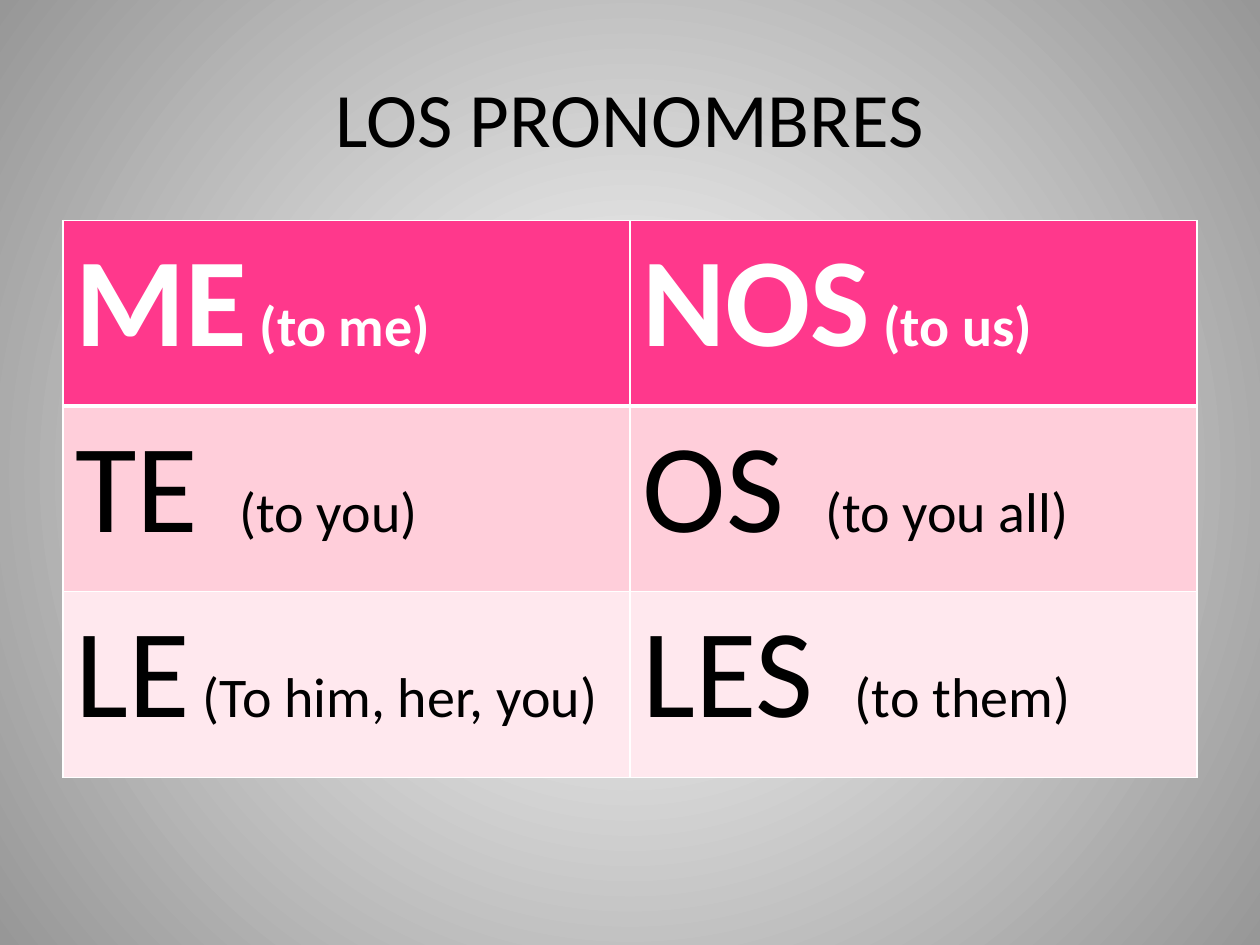
from pptx import Presentation
from pptx.dml.color import RGBColor
from pptx.enum.text import MSO_ANCHOR, PP_ALIGN
from pptx.oxml import parse_xml
from pptx.oxml.ns import nsdecls, qn
from pptx.util import Inches, Pt

WHITE = RGBColor(0xFF, 0xFF, 0xFF)
BLACK = RGBColor(0x00, 0x00, 0x00)
GREY = RGBColor(0x97, 0x97, 0x97)
PINK = RGBColor(0xFF, 0x38, 0x8C)
LIGHT_PINK = RGBColor(0xFF, 0xCE, 0xDA)
PALE_PINK = RGBColor(0xFF, 0xE8, 0xEE)

PRONOUNS = [
    [("ME", " (to me)"), ("NOS", " (to us)")],
    [("TE ", " (to you)"), ("OS ", " (to you all)")],
    [("LE", " (To him, her, you)"), ("LES ", " (to them)")],
]
ROW_FILLS = [PINK, LIGHT_PINK, PALE_PINK]


class Deck:
    """Style and current slide; lengths are units of a 40 by 30 grid."""

    FONT = "Calibri"
    UNIT = Inches(0.25)
    TITLE_SIZE, PRONOUN_SIZE, MEANING_SIZE = 44, 72, 32
    LINE, HEADER_LINE = 1, 3

    def __init__(self, prs):
        self.slide = prs.slides.add_slide(prs.slide_layouts[5])

    def box(self, *lengths):
        return [int(n * self.UNIT) for n in lengths]

    def style(self, r, size, color, bold=False):
        r.font.name, r.font.size = self.FONT, Pt(size)
        r.font.color.rgb, r.font.bold = color, bold

    def background(self, inner, outer):
        """Fill the slide with a gradient spreading from its centre."""
        fill = self.slide.background.fill
        fill.gradient()
        for stop, color in zip(fill.gradient_stops, (inner, outer)):
            stop.color.rgb = color
        lin = next(self.slide.element.iter(qn("a:lin")))
        lin.getparent().replace(lin, parse_xml(
            f'<a:path {nsdecls("a")} path="circle">'
            '<a:fillToRect l="50000" t="50000" r="50000" b="50000"/></a:path>'))

    def title(self, text, *lengths):
        s = self.slide.shapes.title
        s.left, s.top, s.width, s.height = self.box(*lengths)
        tf = s.text_frame
        tf.text = text
        tf.vertical_anchor = MSO_ANCHOR.MIDDLE
        p = tf.paragraphs[0]
        p.alignment = PP_ALIGN.CENTER
        self.style(p.runs[0], self.TITLE_SIZE, BLACK)

    def borders(self, cell, top, bottom):
        tc_pr = cell._tc.get_or_add_tcPr()
        widths = {"L": self.LINE, "R": self.LINE, "T": top, "B": bottom}
        for side, width in widths.items():
            tc_pr.append(parse_xml(
                f'<a:ln{side} {nsdecls("a")} w="{Pt(width)}"><a:solidFill>'
                f'<a:srgbClr val="{WHITE}"/></a:solidFill></a:ln{side}>'))

    def cell(self, cell, texts, fill, row):
        header = row == 0
        self.borders(cell,
                     top=self.HEADER_LINE if row == 1 else self.LINE,
                     bottom=self.HEADER_LINE if header else self.LINE)
        cell.fill.solid()
        cell.fill.fore_color.rgb = fill
        p = cell.text_frame.paragraphs[0]
        for text, size in zip(texts, (self.PRONOUN_SIZE, self.MEANING_SIZE)):
            r = p.add_run()
            r.text = text
            self.style(r, size, WHITE if header else BLACK, bold=header)

    def table(self, rows, fills, *lengths):
        table = self.slide.shapes.add_table(
            len(rows), len(rows[0]), *self.box(*lengths)).table
        for i, (row, fill) in enumerate(zip(rows, fills)):
            for j, texts in enumerate(row):
                self.cell(table.cell(i, j), texts, fill, i)


def main():
    prs = Presentation()
    prs.slide_width, prs.slide_height = Inches(10), Inches(7.5)
    deck = Deck(prs)
    deck.background(WHITE, GREY)
    deck.title("LOS PRONOMBRES", 2, 1.2, 36, 5)
    deck.table(PRONOUNS, ROW_FILLS, 2, 7, 36, 17.68)
    prs.save("out.pptx")


if __name__ == "__main__":
    main()
